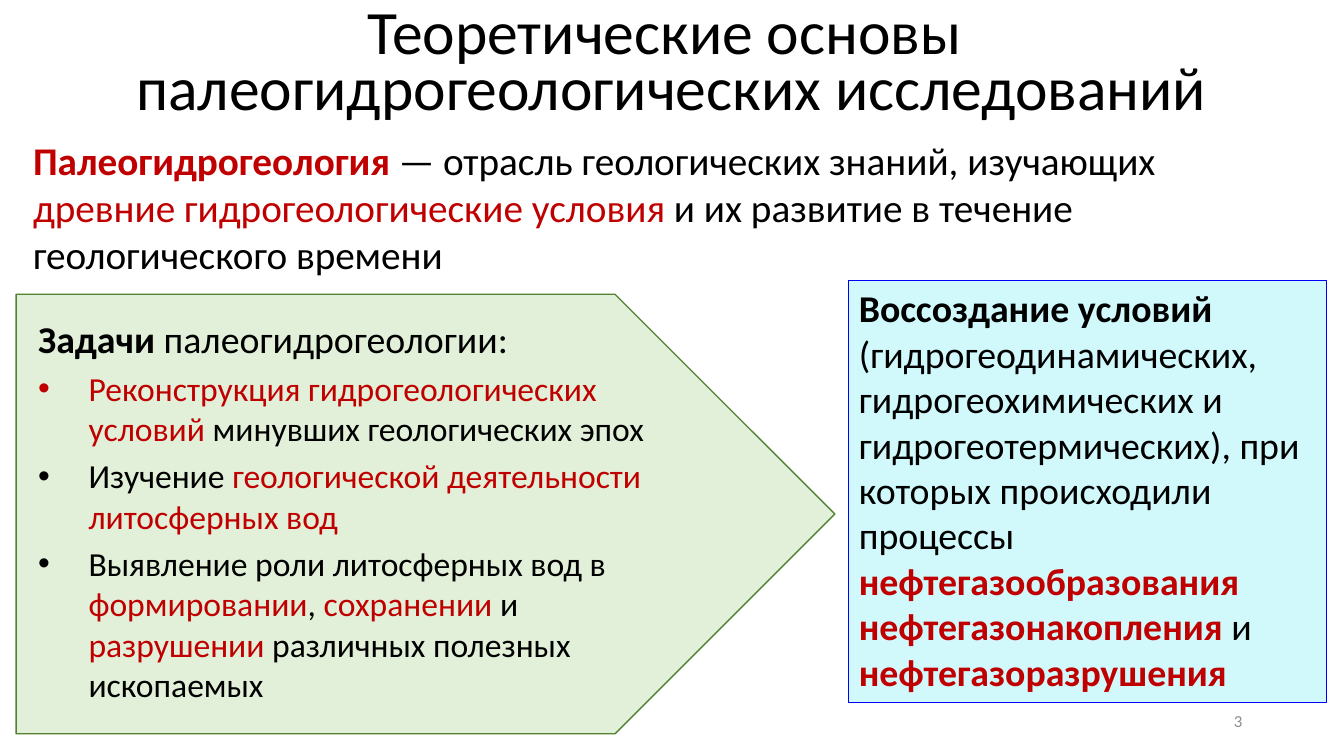
from lxml.etree import SubElement
from pptx import Presentation
from pptx.dml.color import RGBColor
from pptx.enum.shapes import MSO_SHAPE as SHAPE
from pptx.enum.text import MSO_ANCHOR as ANCHOR, MSO_AUTO_SIZE as AUTO, PP_ALIGN as ALIGN
from pptx.oxml.ns import qn
from pptx.util import Pt

PX = 9144  # EMU, 100 px to the inch
FONT = "Calibri"
BLACK = RGBColor(0x00, 0x00, 0x00)
RED = RGBColor(0xC0, 0x00, 0x00)
GRAY = RGBColor(0x8C, 0x8C, 0x8C)
PALE_GREEN = RGBColor(0xE2, 0xF0, 0xD9)
GREEN = RGBColor(0x54, 0x82, 0x35)
PALE_CYAN = RGBColor(0xD1, 0xF9, 0xFB)
BLUE = RGBColor(0x00, 0x00, 0xFF)

DEFINITION = [
    ("Палеогидрогеология", RED, True),
    (" — отрасль геологических знаний, изучающих ",),
    ("древние гидрогеологические условия ", RED),
    ("и их развитие в течение геологического времени",),
]
TASKS_HEADING = [("Задачи ", BLACK, True), ("палеогидрогеологии:",)]
TASKS = [
    [("Реконструкция гидрогеологических условий ", RED),
     ("минувших геологических эпох",)],
    [("Изучение ",), ("геологической деятельности литосферных вод", RED)],
    [("Выявление роли литосферных вод в ",), ("формировании", RED), (", ",),
     ("сохранении", RED), (" и ",), ("разрушении", RED),
     (" различных полезных ископаемых",)],
]
RESULT = [
    ("Воссоздание условий ", BLACK, True),
    ("(гидрогеодинамических, гидрогеохимических и гидрогеотермических), "
     "при которых происходили процессы ",),
    ("нефтегазообразования нефтегазонакопления", RED, True),
    (" и ",),
    ("нефтегазоразрушения", RED, True),
]


def px(*lengths):
    return [n * PX for n in lengths]


def add_panel(s, kind, box, fill, line, width):
    sp = s.shapes.add_shape(kind, *px(*box))
    sp.shadow.inherit = False
    sp.fill.solid()
    sp.fill.fore_color.rgb = fill
    sp.line.color.rgb = line
    sp.line.width = Pt(width)
    return sp


def add_text_box(s, box):
    return s.shapes.add_textbox(*px(*box))


def set_frame(sp, anchor=ANCHOR.TOP, auto=AUTO.NONE):
    tf = sp.text_frame
    tf.word_wrap = True
    tf.auto_size = auto
    tf.vertical_anchor = anchor
    return tf


def add_run(p, text, color=BLACK, bold=False, size=24):
    r = p.add_run()
    r.text = text
    r.font.name = FONT
    r.font.size = Pt(size)
    r.font.bold = bold
    r.font.color.rgb = color


def add_bullet(p, indent=50):
    pPr = p._p.get_or_add_pPr()
    pPr.set("marL", str(indent * PX))
    pPr.set("indent", str(-indent * PX))
    SubElement(pPr, qn("a:buFont"), typeface="Arial")
    SubElement(pPr, qn("a:buChar"), char="•")


def write(tf, runs, size, align=ALIGN.LEFT, before=0, leading=None, bullet=False):
    """Write one paragraph of (text, colour, bold) runs; "\\n" breaks the line."""
    p = tf.paragraphs[0]
    if p.runs:
        p = tf.add_paragraph()
    p.alignment = align
    p.space_before = Pt(before)
    if leading:
        p.line_spacing = Pt(leading)
    if bullet:
        add_bullet(p)
    for run in runs:
        if run[0] == "\n":
            p.add_line_break()
        else:
            add_run(p, *run, size=size)


def main():
    prs = Presentation()
    prs.slide_width, prs.slide_height = px(1333, 750)
    s = prs.slides.add_slide(prs.slide_layouts[6])

    add_panel(s, SHAPE.PENTAGON, (16, 292, 812, 436), PALE_GREEN, GREEN, 1)

    number = set_frame(add_text_box(s, (942, 695, 300, 40)), ANCHOR.MIDDLE)
    write(number, [("3", GRAY)], 12, ALIGN.RIGHT)

    definition = set_frame(add_text_box(s, (23, 130, 1264, 151)), auto=AUTO.SHAPE_TO_FIT_TEXT)
    write(definition, DEFINITION, 28)

    tasks = set_frame(add_text_box(s, (28, 308, 627, 400)), auto=AUTO.SHAPE_TO_FIT_TEXT)
    write(tasks, TASKS_HEADING, 27, before=5)
    for task in TASKS:
        write(tasks, task, 24, before=5, bullet=True)

    panel = add_panel(s, SHAPE.RECTANGLE, (842, 278, 474, 419), PALE_CYAN, BLUE, 0.75)
    write(set_frame(panel, auto=AUTO.SHAPE_TO_FIT_TEXT), RESULT, 27)

    title = set_frame(add_text_box(s, (0, 6, 1333, 68)))
    write(title, [("Теоретические основы ",), ("\n",),
                  ("палеогидрогеологических исследований",)],
          44, ALIGN.CENTER, leading=40)

    prs.save("out.pptx")


if __name__ == "__main__":
    main()
